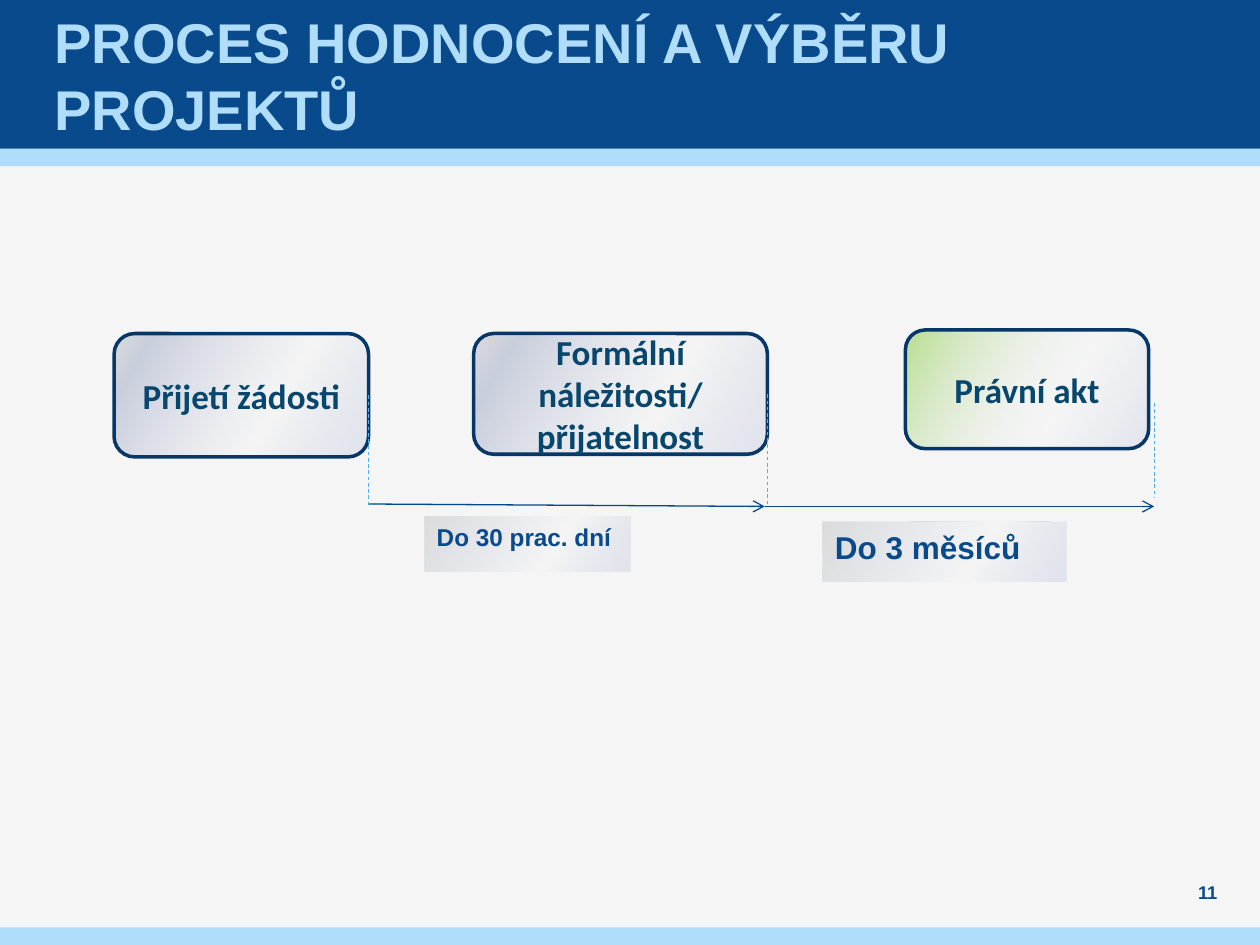
import pptx
import pptx.util
import pptx.dml.color
import pptx.enum.dml
import pptx.enum.shapes
import pptx.enum.text
import pptx.oxml
import pptx.oxml.ns

Pt = pptx.util.Pt
SHAPE = pptx.enum.shapes.MSO_SHAPE
ALIGN = pptx.enum.text.PP_ALIGN
ANCHOR = pptx.enum.text.MSO_ANCHOR
NS = pptx.oxml.ns.nsdecls("a")

COLORS = {
    "background": "F5F5F5",
    "navy": "084A8B",
    "sky": "AFDDFA",
    "border": "063767",
    "step_text": "08476D",
    "arrow": "05488B",
    "guide": "4BB2F4",
}
# Gradient stops: position %, colour, opacity %
STEP = [(0, "DCDCDC", 100), (12, "C9CEDC", 100), (63, "D7DBE8", 0), (100, "E1E4ED", 100)]
FINAL = [(0, "DCDCDC", 100), (6, "92D050", 52), (64, "E5E8F0", 0), (100, "E1E4ED", 100)]
TERM = [(0, "DCDCDC", 100), (63, "D7DBE8", 0), (100, "E1E4ED", 100)]


def rgb(name):
    return pptx.dml.color.RGBColor.from_string(COLORS[name])


class SlideBuilder:
    def __init__(self, slide):
        self.s = slide
        slide.background.fill.solid()
        slide.background.fill.fore_color.rgb = rgb("background")

    def set_text(self, shape, text, size, color, font="Arial", align=ALIGN.LEFT,
                 anchor=ANCHOR.MIDDLE, insets=(7.2, 3.6)):
        tf = shape.text_frame
        tf.text = text
        tf.word_wrap = True
        tf.auto_size = pptx.enum.text.MSO_AUTO_SIZE.NONE
        tf.vertical_anchor = anchor
        tf.margin_left = tf.margin_right = Pt(insets[0])
        tf.margin_top = tf.margin_bottom = Pt(insets[1])
        p = tf.paragraphs[0]
        p.alignment = align
        f = p.runs[0].font
        f.name, f.size, f.bold = font, Pt(size), True
        f.color.rgb = rgb(color)

    def shape(self, kind, x, y, w, h):
        sp = self.s.shapes.add_shape(kind, Pt(x), Pt(y), Pt(w), Pt(h))
        sp.shadow.inherit = False
        sp.line.fill.background()
        return sp

    def band(self, y, h, color):
        sp = self.shape(SHAPE.RECTANGLE, 0, y, 720, h)
        sp.fill.solid()
        sp.fill.fore_color.rgb = rgb(color)

    def title(self, text, x, y, w, h):
        sp = self.s.shapes.title
        sp.left, sp.top, sp.width, sp.height = Pt(x), Pt(y), Pt(w), Pt(h)
        self.set_text(sp, text, 32, "sky", insets=(2.88, 0))
        # Bring the title in front of the bands
        self.s.shapes._spTree.append(sp._element)

    def page_number(self, text, x, y, w, h):
        sp = self.s.shapes.add_textbox(Pt(x), Pt(y), Pt(w), Pt(h))
        self.set_text(sp, text, 10.5, "navy", align=ALIGN.CENTER, insets=(0, 0))

    def gradient(self, sp, stops):
        sp.fill.gradient()
        sp.fill.gradient_angle = 330
        gs_list = sp._element.spPr.find(".//" + pptx.oxml.ns.qn("a:gsLst"))
        for old in list(gs_list):
            gs_list.remove(old)
        for pos, color, opacity in stops:
            gs_list.append(pptx.oxml.parse_xml(
                f'<a:gs {NS} pos="{pos * 1000}"><a:srgbClr val="{color}">'
                f'<a:alpha val="{opacity * 1000}"/></a:srgbClr></a:gs>'))

    def step(self, text, x, y, w, h, stops):
        sp = self.shape(SHAPE.ROUNDED_RECTANGLE, x, y, w, h)
        self.gradient(sp, stops)
        sp.line.color.rgb = rgb("border")
        sp.line.width = Pt(2)
        self.set_text(sp, text, 20, "step_text", "Calibri", ALIGN.CENTER)

    def term(self, text, size, x, y, w, h):
        sp = self.shape(SHAPE.RECTANGLE, x, y, w, h)
        self.gradient(sp, TERM)
        self.set_text(sp, text, size, "navy", anchor=ANCHOR.TOP)

    def line(self, x1, y1, x2, y2, color, width):
        c = self.s.shapes.add_connector(pptx.enum.shapes.MSO_CONNECTOR.STRAIGHT,
                                        Pt(x1), Pt(y1), Pt(x2), Pt(y2))
        c.line.color.rgb = rgb(color)
        c.line.width = Pt(width)
        c._element.spPr.append(pptx.oxml.parse_xml(f"<a:effectLst {NS}/>"))
        return c

    def arrow(self, x1, y1, x2, y2):
        c = self.line(x1, y1, x2, y2, "arrow", 0.75)
        ln = c._element.spPr.find(pptx.oxml.ns.qn("a:ln"))
        ln.append(pptx.oxml.parse_xml(f'<a:tailEnd {NS} type="arrow"/>'))

    def guide(self, x, y1, y2):
        c = self.line(x, y1, x, y2, "guide", 0.5)
        c.line.dash_style = pptx.enum.dml.MSO_LINE.DASH


def main():
    prs = pptx.Presentation()
    prs.slide_width, prs.slide_height = Pt(720), Pt(540)
    b = SlideBuilder(prs.slides.add_slide(prs.slide_layouts[5]))

    # Header, footer and title
    b.band(85, 10, "sky")
    b.band(0, 85, "navy")
    b.band(530, 10, "sky")
    b.title("PROCES HODNOCENÍ A VÝBĚRU PROJEKTŮ", 28.1, 0, 663, 85)
    b.page_number("11", 671.8, 502.6, 36.7, 14.4)

    # Process steps
    b.step("Přijetí žádosti", 65.2, 190.6, 145.4, 70.5, STEP)
    b.step("Formální náležitosti/ přijatelnost", 270.7, 190.6, 167.8, 69, STEP)
    b.step("Právní akt", 517.4, 188.6, 139, 67.8, FINAL)

    # Timeline with its terms
    b.arrow(210.5, 288, 437, 289.4)
    b.term("Do 30 prac. dní", 13.9, 242.5, 295, 117.8, 31.6)
    b.arrow(437, 289.4, 659.5, 289.4)
    b.term("Do 3 měsíců", 18, 470, 297.9, 139.4, 34.2)

    # Dashed guides from the steps to the timeline
    for x, y1, y2 in ((210.5, 226, 289), (438.5, 225.4, 288), (659.5, 230.4, 284.4)):
        b.guide(x, y1, y2)

    prs.save("out.pptx")


if __name__ == "__main__":
    main()
